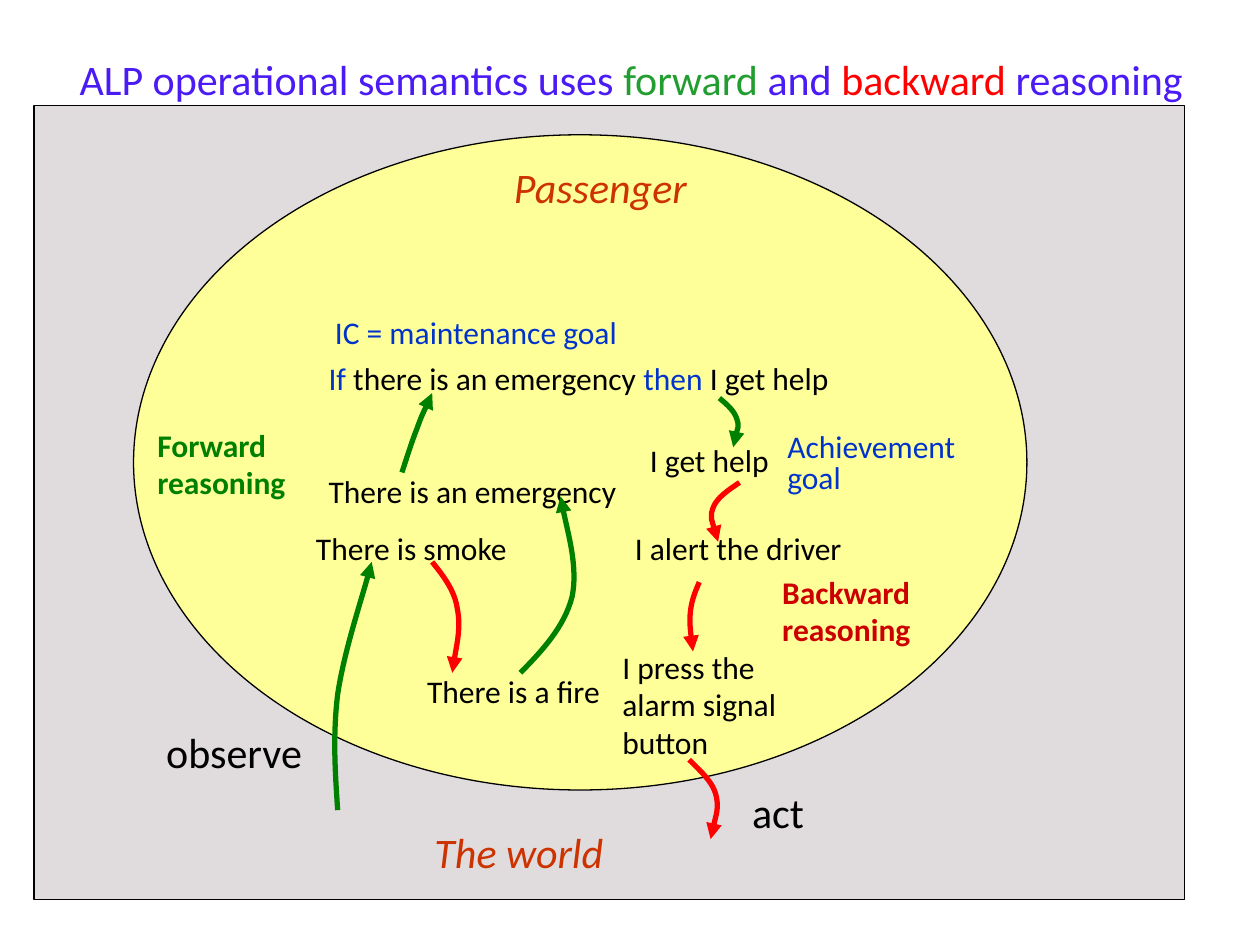
"""Build a slide on forward and backward reasoning in ALP operational semantics."""
from dataclasses import dataclass

from lxml import etree
from pptx import Presentation
from pptx.dml.color import RGBColor
from pptx.enum.shapes import MSO_SHAPE
from pptx.enum.text import MSO_ANCHOR, PP_ALIGN
from pptx.oxml.ns import qn
from pptx.util import Inches, Pt

RECTANGLE, OVAL = MSO_SHAPE.RECTANGLE, MSO_SHAPE.OVAL
LEFT, CENTER = PP_ALIGN.LEFT, PP_ALIGN.CENTER
TOP, MIDDLE = MSO_ANCHOR.TOP, MSO_ANCHOR.MIDDLE


@dataclass(frozen=True)
class Theme:
    font: str = "Calibri"
    large: int = 24
    body: int = 18
    ink: str = "000000"
    title: str = "4A1BF5"
    title_green: str = "229E31"
    goal: str = "0033CC"
    place: str = "CC3300"
    forward: str = "008000"
    backward: str = "FF0000"
    backward_label: str = "CC0000"
    world: str = "918485"
    mind: str = "FFFF99"


theme = Theme()
presentation = Presentation()
presentation.slide_width, presentation.slide_height = Inches(10), Inches(7.5)
slide = presentation.slides.add_slide(presentation.slide_layouts[6])


def add_text(text, *, box, colors=(theme.ink,), size=theme.body, bold=False, italic=False,
             align=LEFT, anchor=TOP, wrap=False, tight=False):
    """Add a text box; newlines part paragraphs and bars part the coloured runs."""
    frame = slide.shapes.add_textbox(*map(Inches, box)).text_frame
    frame.word_wrap = wrap
    frame.vertical_anchor = anchor
    for index, line in enumerate(text.split("\n")):
        paragraph = frame.add_paragraph() if index else frame.paragraphs[0]
        paragraph.alignment = align
        if tight:
            paragraph.line_spacing = 0.8
            paragraph.space_before = Pt(size * 0.2)
        for words, color in zip(line.split("|"), colors):
            run = paragraph.add_run()
            run.text = words
            run.font.name, run.font.size = theme.font, Pt(size)
            run.font.bold, run.font.italic = bold, italic
            run.font.color.rgb = RGBColor.from_string(color)


def add_curved_arrow(points, color):
    """Draw a Bézier arrow through a start point and triples of control points."""
    (start_x, start_y), *controls = [(Inches(x), Inches(y)) for x, y in points]
    builder = slide.shapes.build_freeform(start_x, start_y)
    builder.add_line_segments(controls, close=False)
    arrow = builder.convert_to_shape()
    arrow.shadow.inherit = False
    arrow.fill.background()
    arrow.line.color.rgb = RGBColor.from_string(color)
    arrow.line.width = Pt(3)
    segments = list(arrow.element.iter(qn("a:lnTo")))
    outline = segments[0].getparent()
    for first in range(0, len(segments), 3):
        curve = etree.SubElement(outline, qn("a:cubicBezTo"))
        for segment in segments[first:first + 3]:
            curve.append(segment[0])
            outline.remove(segment)
    etree.SubElement(arrow.line._get_or_add_ln(), qn("a:tailEnd"), type="triangle")


for preset, box, color, opacity in (
    (RECTANGLE, (0.27, 0.84, 9.13, 6.3), theme.world, 28),
    (OVAL, (1.06, 1.07, 7.09, 5.2), theme.mind, 100),
):
    shape = slide.shapes.add_shape(preset, *map(Inches, box))
    shape.shadow.inherit = False
    shape.fill.solid()
    shape.fill.fore_color.rgb = RGBColor.from_string(color)
    shape.line.color.rgb = RGBColor.from_string(theme.ink)
    shape.line.width = Pt(0.75)
    if opacity < 100:
        fill_color = shape.element.spPr.find(qn("a:solidFill"))[0]
        etree.SubElement(fill_color, qn("a:alpha"), val=str(opacity * 1000))

add_text("ALP operational semantics uses |forward| and |backward| reasoning",
         box=(0.51, 0, 9, 1.25), size=theme.large, align=CENTER, anchor=MIDDLE, wrap=True,
         colors=(theme.title, theme.title_green, theme.title, theme.backward, theme.title))

for name, box in (("Passenger", (3.98, 1.31, 1.65, 0.52)),
                  ("The world", (3.35, 6.59, 1.9, 0.47))):
    add_text(name, box=box, colors=(theme.place,), size=theme.large,
             italic=True, wrap=True, tight=True)

for name, box in (("observe", (1.22, 5.72, 1.29, 0.51)), ("act", (5.87, 6.19, 0.62, 0.51))):
    add_text(name, box=box, size=theme.large)

for name, box in (("IC = maintenance goal", (2.56, 2.49, 3.15, 0.34)),
                  ("Achievement goal", (6.15, 3.4, 1.81, 0.59))):
    add_text(name, box=box, colors=(theme.goal,), wrap=True, tight=True)

for name, box, color in (
    ("Forward\nreasoning", (1.15, 3.39, 1.22, 0.65), theme.forward),
    ("Backward\nreasoning", (6.11, 4.56, 1.28, 0.65), theme.backward_label),
):
    add_text(name, box=box, colors=(color,), bold=True, tight=True)

add_text("If |there is an emergency |then |I get help", box=(2.51, 2.8, 4.96, 0.4),
         colors=(theme.goal, theme.ink) * 2, wrap=True)
add_text("There is an emergency", box=(2.51, 3.7, 4.96, 0.4), wrap=True)
add_text("I get help", box=(5.05, 3.45, 1.16, 0.4), align=CENTER)
add_text("I press the\nalarm signal\nbutton", box=(4.84, 5.09, 1.49, 1.01))
for statement, box in (
    ("I alert the driver", (4.93, 4.21, 1.86, 0.35)),
    ("There is smoke", (2.4, 4.21, 1.73, 0.34)),
    ("There is a fire", (3.28, 5.34, 1.59, 0.34)),
):
    add_text(statement, box=box, align=CENTER, tight=True)

forward_arrows = (
    ((2.68, 6.43), (2.66, 6.13), (2.64, 5.84), (2.68, 5.51),
     (2.73, 5.18), (2.91, 4.63), (2.95, 4.46)),
    ((3.19, 3.75), (3.23, 3.63), (3.27, 3.5), (3.31, 3.4),
     (3.35, 3.29), (3.41, 3.17), (3.43, 3.12)),
    ((5.71, 3.16), (5.77, 3.21), (5.83, 3.26), (5.85, 3.33),
     (5.87, 3.39), (5.82, 3.51), (5.82, 3.55)),
    ((4.13, 5.34), (4.31, 5.16), (4.48, 4.97), (4.54, 4.74),
     (4.59, 4.51), (4.47, 4.08), (4.45, 3.94)),
)
backward_arrows = (
    ((5.47, 6.03), (5.56, 6.12), (5.65, 6.2), (5.68, 6.3),
     (5.71, 6.41), (5.65, 6.6), (5.64, 6.66)),
    ((5.55, 4.62), (5.52, 4.69), (5.49, 4.76), (5.48, 4.85),
     (5.47, 4.94), (5.49, 5.12), (5.5, 5.17)),
    ((5.87, 3.83), (5.78, 3.89), (5.69, 3.95), (5.66, 4.03),
     (5.63, 4.11), (5.69, 4.26), (5.7, 4.3)),
    ((3.43, 4.46), (3.52, 4.57), (3.61, 4.69), (3.63, 4.83),
     (3.66, 4.98), (3.6, 5.25), (3.59, 5.34)),
)
for arrows, color in ((forward_arrows, theme.forward), (backward_arrows, theme.backward)):
    for points in arrows:
        add_curved_arrow(points, color)

presentation.save("out.pptx")
